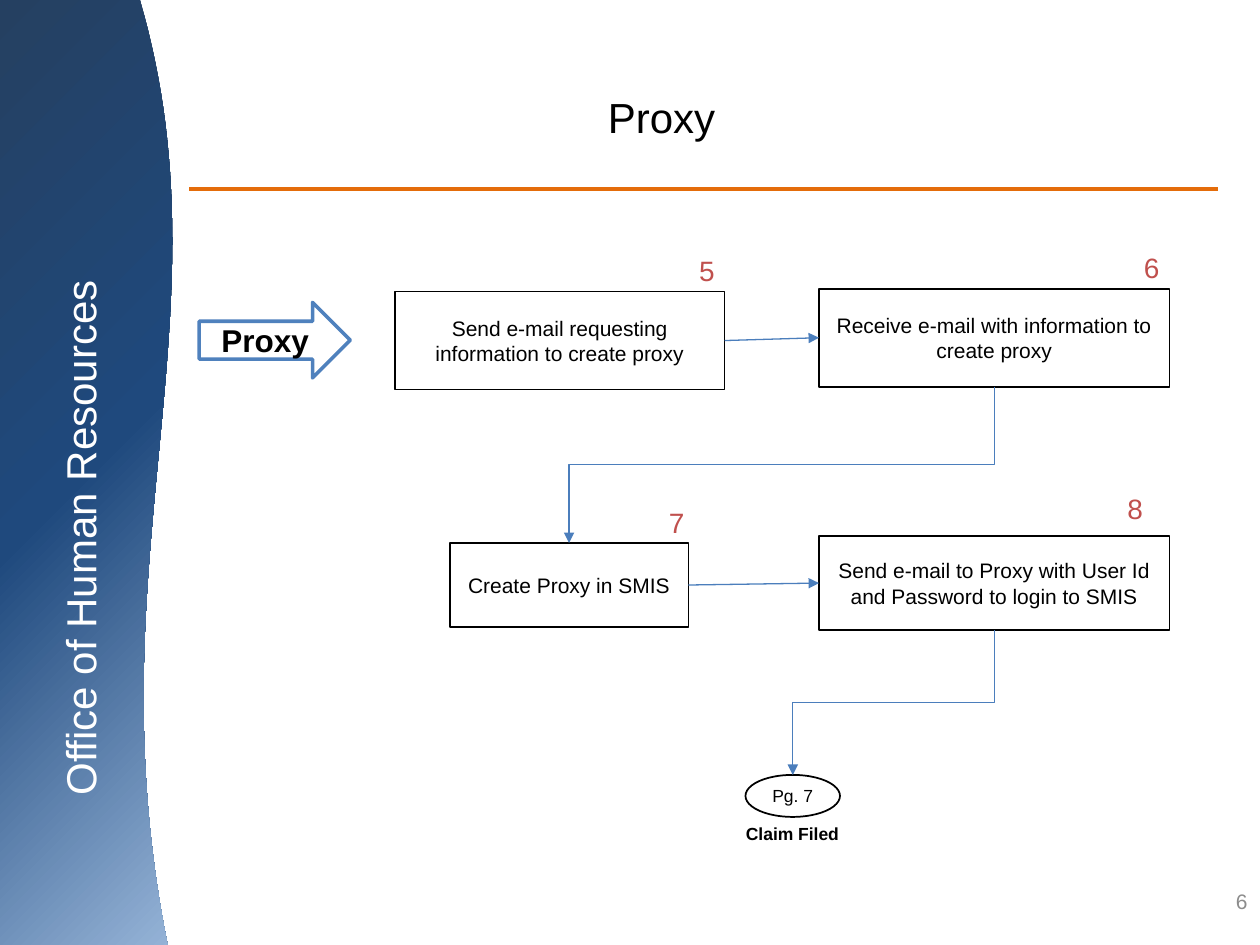
"""Build the Proxy process-flow slide."""
from copy import deepcopy

from pptx import Presentation
from pptx.dml.color import RGBColor
from pptx.enum.shapes import MSO_CONNECTOR, MSO_SHAPE
from pptx.enum.text import MSO_ANCHOR, PP_ALIGN
from pptx.oxml.ns import qn
from pptx.oxml.xmlchemy import OxmlElement
from pptx.util import Pt

LEFT, CENTER, RIGHT = PP_ALIGN.LEFT, PP_ALIGN.CENTER, PP_ALIGN.RIGHT
TOP, MIDDLE = MSO_ANCHOR.TOP, MSO_ANCHOR.MIDDLE
STRAIGHT, ELBOW = MSO_CONNECTOR.STRAIGHT, MSO_CONNECTOR.ELBOW
PROCESS, OVAL = MSO_SHAPE.FLOWCHART_PROCESS, MSO_SHAPE.FLOWCHART_CONNECTOR
ARROW = MSO_SHAPE.RIGHT_ARROW


def rgb(value):
    """Return the colour for a hex string."""
    return RGBColor.from_string(value)


def write(s, text, size=12, color="000000", bold=False, align=CENTER, anchor=MIDDLE):
    """Put formatted text into a shape."""
    tf = s.text_frame
    tf.word_wrap = True
    tf.vertical_anchor = anchor
    p = tf.paragraphs[0]
    p.alignment = align
    r = p.add_run()
    r.text = text
    r.font.name = "Arial"
    r.font.size = Pt(size)
    r.font.bold = bold
    r.font.color.rgb = rgb(color)


prs = Presentation()
prs.slide_width, prs.slide_height = Pt(720), Pt(540)
slide = prs.slides.add_slide(prs.slide_layouts[5])
shapes = slide.shapes

title = shapes.title
title.left, title.top, title.width, title.height = Pt(108), Pt(21.6), Pt(540), Pt(90)
write(title, "Proxy", size=24)

curve = [(80, 0), (132.5, 180.7), (51.8, 321), (95.8, 540)]
steps = 60
edge = []
for i in range(steps + 1):
    t = i / steps
    weights = ((1 - t) ** 3, 3 * t * (1 - t) ** 2, 3 * t ** 2 * (1 - t), t ** 3)
    edge.append(tuple(Pt(sum(w * pt[axis] for w, pt in zip(weights, curve))) for axis in (0, 1)))
builder = shapes.build_freeform(0, 0, scale=1.0)
builder.add_line_segments(edge + [(0, Pt(540))], close=True)
wave = builder.convert_to_shape()
wave.shadow.inherit = False
wave.line.fill.background()
wave.fill.gradient()
wave.fill.gradient_angle = 315
stops = wave._element.spPr.find(qn("a:gradFill")).find(qn("a:gsLst"))
stops.insert(1, deepcopy(stops[0]))
for stop, position, color in zip(wave.fill.gradient_stops, (0, 0.5, 1), ("254061", "1F497D", "95B3D7")):
    stop.position = position
    stop.color.rgb = rgb(color)

office = shapes.add_textbox(Pt(-152.6), Pt(287.3), Pt(393.8), Pt(40.3))
office.rotation = 270
office.text_frame.margin_top = Pt(7)
write(office, "Office of Human Resources", size=24, color="FFFFFF", anchor=TOP)

labels = [
    (552.2, 500.4, 167.8, 28.8, "6", dict(color="8C8C8C", align=RIGHT)),
    (411.8, 466.6, 82, 19.4, "Claim Filed", dict(size=10, bold=True, anchor=TOP)),
]
for x, y, w, text in [(392.4, 141.1, 23.8, "5"), (646.6, 139.7, 23.8, "6"),
                      (375.1, 285.1, 19.4, "7"), (637.2, 277.2, 28.8, "8")]:
    labels.append((x, y, w, 26.6, text, dict(size=16, color="C0504D", align=LEFT, anchor=TOP)))
for x, y, w, h, text, style in labels:
    write(shapes.add_textbox(Pt(x), Pt(y), Pt(w), Pt(h)), text, **style)

nodes = [
    (PROCESS, 225.7, 166.6, 188.4, 56, "Send e-mail requesting information to create proxy", {}),
    (PROCESS, 468, 165, 200.3, 56, "Receive e-mail with information to create proxy", {}),
    (PROCESS, 257, 310.3, 136.4, 48, "Create Proxy in SMIS", {}),
    (PROCESS, 468, 306.4, 200.3, 53.6, "Send e-mail to Proxy with User Id and Password to login to SMIS", {}),
    (OVAL, 426, 442.8, 54, 24, "Pg. 7", dict(size=10)),
    (ARROW, 113.8, 172.8, 86.4, 43.2, "Proxy", dict(size=18, bold=True)),
]
for kind, x, y, w, h, text, style in nodes:
    s = shapes.add_shape(kind, Pt(x), Pt(y), Pt(w), Pt(h))
    s.shadow.inherit = False
    s.fill.background()
    s.line.color.rgb = rgb("4F81BD" if kind == ARROW else "000000")
    s.line.width = Pt(2 if kind == ARROW else 1)
    write(s, text, **style)

lines = [
    (STRAIGHT, 108, 108, 696, 108, "E46C0A", 2.25),
    (STRAIGHT, 414.1, 194.6, 468, 193, "4B7EBC", 0.75),
    (ELBOW, 568.2, 221, 325.2, 310.3, "4B7EBC", 0.75),
    (STRAIGHT, 393.4, 334.3, 468, 333.2, "4B7EBC", 0.75),
    (ELBOW, 568.2, 360, 453, 442.8, "4B7EBC", 0.75),
]
for kind, x1, y1, x2, y2, color, width in lines:
    if kind == ELBOW:
        cx, cy, dx, dy = (x1 + x2) / 2, (y1 + y2) / 2, (y2 - y1) / 2, (x1 - x2) / 2
        s = shapes.add_connector(kind, Pt(cx - dx), Pt(cy - dy), Pt(cx + dx), Pt(cy + dy))
        s._element.spPr.find(qn("a:xfrm")).set("rot", "5400000")
    else:
        s = shapes.add_connector(kind, Pt(x1), Pt(y1), Pt(x2), Pt(y2))
    s.line.color.rgb = rgb(color)
    s.line.width = Pt(width)
    if width < 1:
        tail = OxmlElement("a:tailEnd")
        tail.set("type", "triangle")
        s.line._get_or_add_ln().append(tail)
    s._element.spPr.append(OxmlElement("a:effectLst"))

prs.save("out.pptx")
